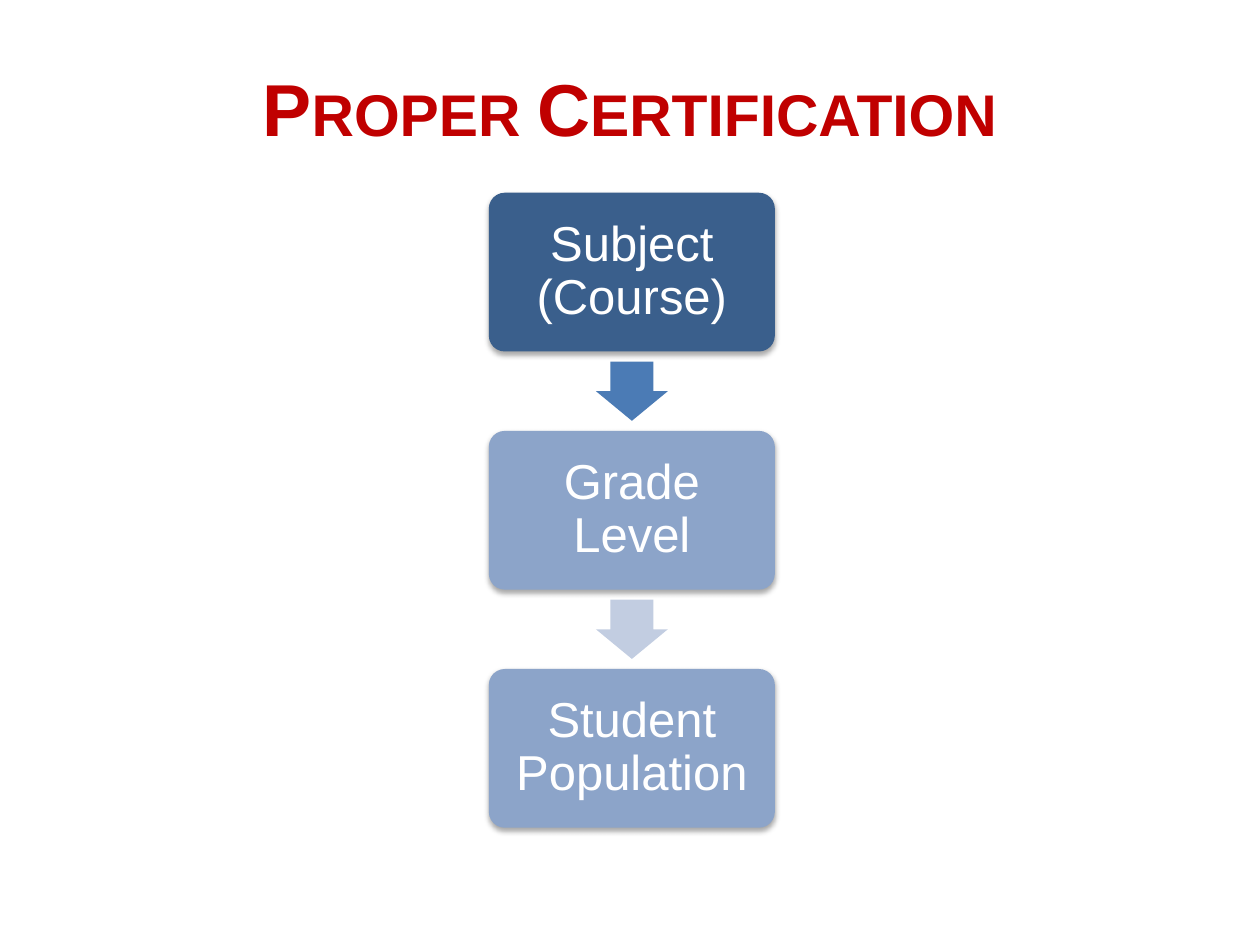
"""Build the Proper Certification slide: three steps joined by arrows."""
from dataclasses import dataclass
from typing import Optional

import lxml.etree
import pptx
import pptx.dml.color
import pptx.enum.shapes
import pptx.enum.text
import pptx.oxml.ns
import pptx.util
from pptx.util import Inches

COLORS = {
    "title": "C00000",
    "text": "FFFFFF",
    "dark": "3A5F8C",
    "light": "8CA4C9",
    "arrow": "4B7BB5",
    "pale arrow": "C2CDE1",
    "shadow": "000000",
}
FONT = "Arial"
CARD_LEFT, CARD_TOP, CARD_WIDTH, CARD_HEIGHT = 3.88, 1.53, 2.27, 1.26
CARD_PITCH = 1.89
ARROW_LENGTH, ARROW_BREADTH = 0.47, 0.57


@dataclass
class Step:
    label: str
    fill: str
    arrow: Optional[str] = None


STEPS = [
    Step("Subject (Course)", "dark", "arrow"),
    Step("Grade Level", "light", "pale arrow"),
    Step("Student Population", "light"),
]


def rgb(name: str) -> pptx.dml.color.RGBColor:
    return pptx.dml.color.RGBColor.from_string(COLORS[name])


def format_run(run, size: int, color: str) -> None:
    run.font.name = FONT
    run.font.size = pptx.util.Pt(size)
    run.font.color.rgb = rgb(color)


def set_margins(frame, inset: float) -> None:
    frame.margin_left = frame.margin_right = Inches(inset)
    frame.margin_top = frame.margin_bottom = Inches(inset)


def paint(shape, color: str) -> None:
    shape.shadow.inherit = False
    shape.fill.solid()
    shape.fill.fore_color.rgb = rgb(color)
    shape.line.fill.background()


def add_soft_shadow(shape) -> None:
    qn = pptx.oxml.ns.qn
    effects = shape._element.spPr.find(qn("a:effectLst"))
    shadow = lxml.etree.SubElement(
        effects, qn("a:outerShdw"),
        blurRad="40000", dist="23000", dir="5400000", rotWithShape="0")
    color = lxml.etree.SubElement(shadow, qn("a:srgbClr"), val=COLORS["shadow"])
    lxml.etree.SubElement(color, qn("a:alpha"), val="35000")


def add_title(slide, text: str) -> None:
    title = slide.shapes.title
    title.left, title.top = Inches(0.5), Inches(0.5)
    title.width, title.height = Inches(9), Inches(0.71)
    frame = title.text_frame
    frame.text = text
    frame.vertical_anchor = pptx.enum.text.MSO_ANCHOR.TOP
    set_margins(frame, 0)
    paragraph = frame.paragraphs[0]
    paragraph.alignment = pptx.enum.text.PP_ALIGN.CENTER
    run = paragraph.runs[0]
    format_run(run, 42, "title")
    run.font.bold = True
    run.font._element.set("cap", "small")


def add_card(slide, step: Step, top: float) -> None:
    card = slide.shapes.add_shape(
        pptx.enum.shapes.MSO_SHAPE.ROUNDED_RECTANGLE,
        Inches(CARD_LEFT), Inches(top), Inches(CARD_WIDTH), Inches(CARD_HEIGHT))
    card.adjustments[0] = 0.1
    paint(card, step.fill)
    add_soft_shadow(card)
    frame = card.text_frame
    frame.text = step.label
    frame.word_wrap = True
    frame.vertical_anchor = pptx.enum.text.MSO_ANCHOR.MIDDLE
    set_margins(frame, 0.12)
    paragraph = frame.paragraphs[0]
    paragraph.alignment = pptx.enum.text.PP_ALIGN.CENTER
    paragraph.line_spacing = 0.9
    format_run(paragraph.runs[0], 28, "text")


def add_arrow(slide, color: str, card_top: float) -> None:
    center_x = CARD_LEFT + CARD_WIDTH / 2
    center_y = card_top + (CARD_HEIGHT + CARD_PITCH) / 2
    arrow = slide.shapes.add_shape(
        pptx.enum.shapes.MSO_SHAPE.RIGHT_ARROW,
        Inches(center_x - ARROW_LENGTH / 2), Inches(center_y - ARROW_BREADTH / 2),
        Inches(ARROW_LENGTH), Inches(ARROW_BREADTH))
    arrow.rotation = 90
    arrow.adjustments[0] = 0.6
    arrow.adjustments[1] = 0.5
    paint(arrow, color)


def main() -> None:
    presentation = pptx.Presentation()
    presentation.slide_width, presentation.slide_height = Inches(10), Inches(7.5)
    slide = presentation.slides.add_slide(presentation.slide_layouts[5])
    add_title(slide, "Proper Certification")
    for index, step in enumerate(STEPS):
        top = CARD_TOP + index * CARD_PITCH
        add_card(slide, step, top)
        if step.arrow:
            add_arrow(slide, step.arrow, top)
    presentation.save("out.pptx")


if __name__ == "__main__":
    main()
